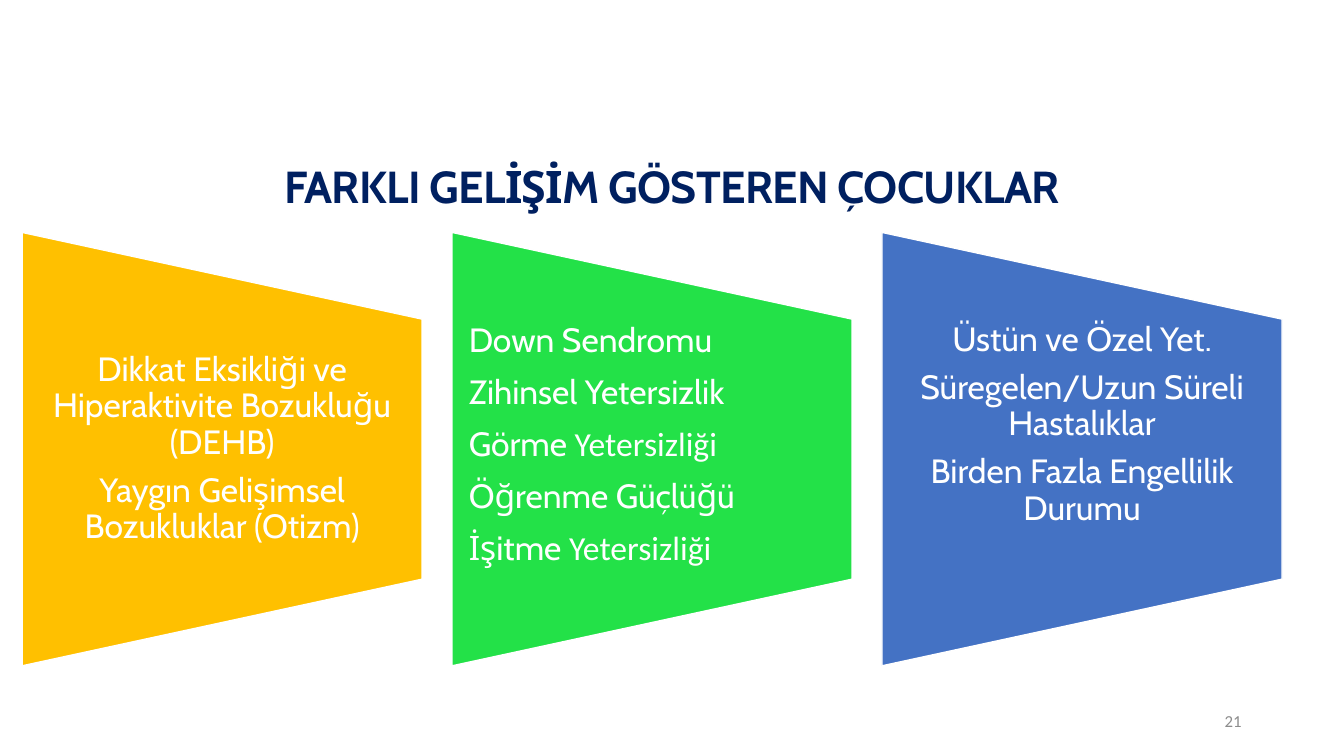
from pptx import Presentation
from pptx.dml.color import RGBColor
from pptx.enum.shapes import MSO_SHAPE
from pptx.enum.text import MSO_ANCHOR as ANCHOR, PP_ALIGN as ALIGN
from pptx.util import Pt

NAVY = RGBColor(0x00, 0x20, 0x60)
AMBER = RGBColor(0xFF, 0xC0, 0x00)
GREEN = RGBColor(0x23, 0xE1, 0x48)
BLUE = RGBColor(0x44, 0x72, 0xC4)
GRAY = RGBColor(0x8C, 0x8C, 0x8C)
WHITE = RGBColor(0xFF, 0xFF, 0xFF)
CABIN, CALIBRI = "Cabin", "Calibri"

# Each paragraph is a list of (text, font) runs
DEVELOPMENT = [
    [("Dikkat Eksikliği ve Hiperaktivite Bozukluğu (DEHB)", CABIN)],
    [("Yaygın Gelişimsel Bozukluklar (Otizm)", CABIN)],
]
IMPAIRMENTS = [
    [("Down Sendromu", CABIN)],
    [("Zihinsel Yetersizlik", CABIN)],
    [("Görme ", CABIN), ("Yetersizliği", CALIBRI)],
    [("Öğrenme Güçlüğü", CABIN)],
    [("İşitme ", CABIN), ("Yetersizliği", CALIBRI)],
]
OTHER_NEEDS = [
    [("Üstün ve Özel Yet.", CABIN)],
    [("Süregelen/Uzun Süreli Hastalıklar", CABIN)],
    [("Birden Fazla Engellilik Durumu", CABIN)],
]


def add_text_frame(s, x, y, w, h, anchor=ANCHOR.MIDDLE):
    tf = s.shapes.add_textbox(Pt(x), Pt(y), Pt(w), Pt(h)).text_frame
    tf.word_wrap = True
    tf.vertical_anchor = anchor
    return tf


def add_run(p, text, font, size, color, bold=False):
    r = p.add_run()
    r.text = text
    r.font.name, r.font.size, r.font.bold = font, Pt(size), bold
    r.font.color.rgb = color
    return r


def add_title(s, x, y, w, h):
    p = add_text_frame(s, x, y, w, h).paragraphs[0]
    p.alignment = ALIGN.CENTER
    p.line_spacing = 0.9
    r = add_run(p, "FARKLI GELİŞİM GÖSTEREN ÇOCUKLAR", CABIN, 32, NAVY, True)
    r.font._element.set("spc", "-50")


def add_panel(s, x, y, w, h, color, paragraphs, centered=True, bottom=0):
    # Trapezoid: laid out with swapped sides, then turned about its centre
    sp = s.shapes.add_shape(MSO_SHAPE.FLOWCHART_MANUAL_OPERATION,
                            Pt(x + (w - h) / 2), Pt(y + (h - w) / 2), Pt(h), Pt(w))
    sp.rotation = 270
    sp.shadow.inherit = False
    sp.fill.solid()
    sp.fill.fore_color.rgb = color
    sp.line.color.rgb = WHITE
    sp.line.width = Pt(1)

    # Text fills the middle three fifths
    tf = add_text_frame(s, x, y + h / 5, w, h * 3 / 5,
                        ANCHOR.MIDDLE if centered else ANCHOR.TOP)
    tf.margin_left = tf.margin_right = Pt(12)
    tf.margin_top, tf.margin_bottom = 0, Pt(bottom)
    for i, runs in enumerate(paragraphs):
        p = tf.add_paragraph() if i else tf.paragraphs[0]
        p.alignment = ALIGN.CENTER if centered else ALIGN.LEFT
        p.line_spacing = 0.9 if centered else 1.0
        p.space_after = Pt(8.4)
        for text, font in runs:
            add_run(p, text, font, 24, WHITE)


def add_panels(s, x, y, w, h, gap):
    panels = [
        (AMBER, DEVELOPMENT, True, 0),
        (GREEN, IMPAIRMENTS, False, 0),
        (BLUE, OTHER_NEEDS, True, 34.6),
    ]
    panel_w = (w - gap * (len(panels) - 1)) / len(panels)
    for i, panel in enumerate(panels):
        add_panel(s, x + i * (panel_w + gap), y, panel_w, h, *panel)


def add_page_number(s, x, y, w, h):
    p = add_text_frame(s, x, y, w, h).paragraphs[0]
    p.alignment = ALIGN.RIGHT
    add_run(p, "21", CALIBRI, 12, GRAY)


def main():
    prs = Presentation()
    prs.slide_width, prs.slide_height = Pt(960), Pt(540)
    s = prs.slides.add_slide(prs.slide_layouts[6])
    add_title(s, 66, 103.5, 828, 63)
    add_panels(s, 15.8, 166, 900, 309.6, 21.3)
    add_page_number(s, 678, 500.5, 216, 28.75)
    prs.save("out.pptx")


if __name__ == "__main__":
    main()
